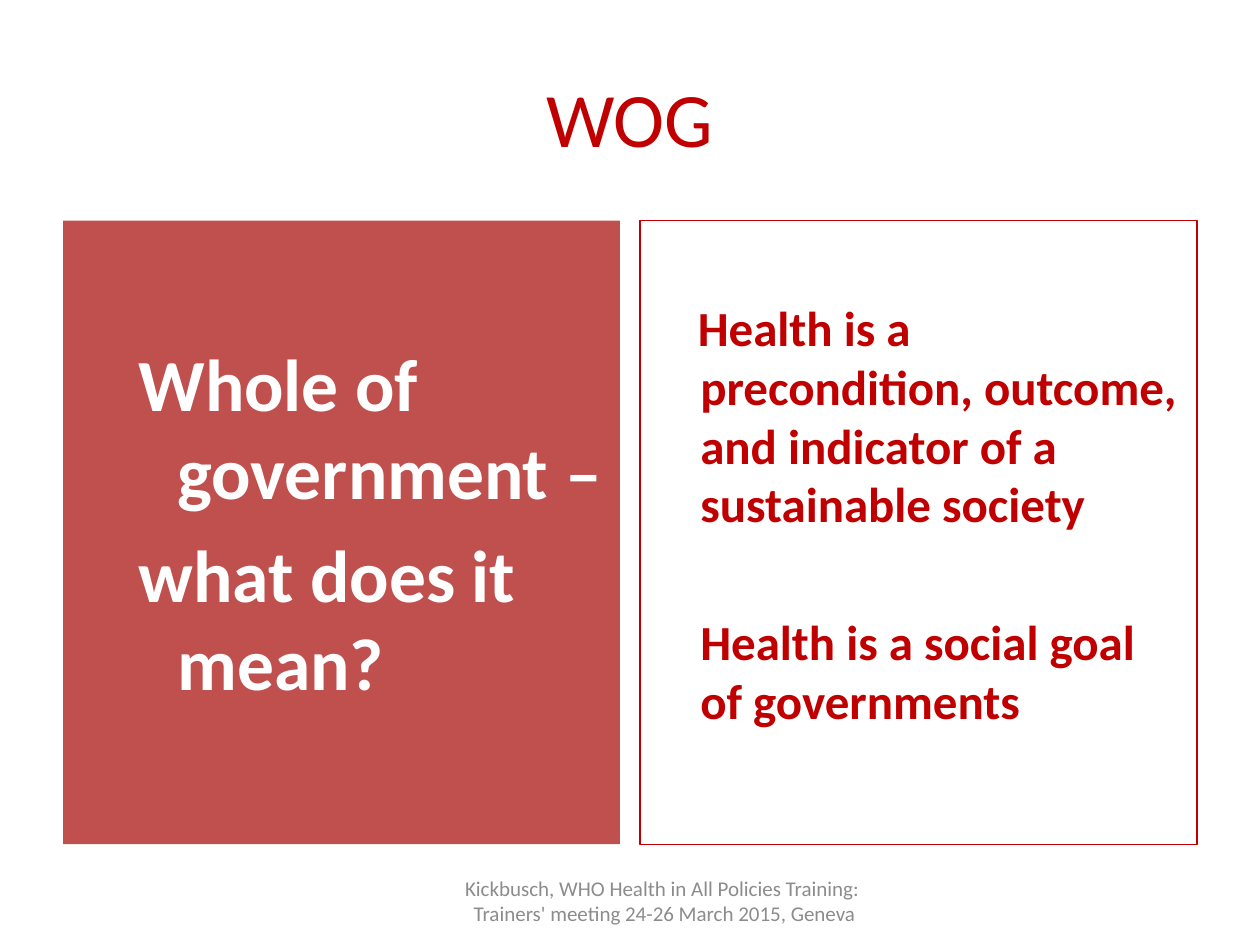
"""Build the WOG slide: a title, two text panels and a footer."""
import pptx
import pptx.dml.color
import pptx.enum.shapes
import pptx.enum.text
import pptx.util

Inches, Pt = pptx.util.Inches, pptx.util.Pt
ALIGN, ANCHOR = pptx.enum.text.PP_ALIGN, pptx.enum.text.MSO_ANCHOR
RED, WHITE, GREY = "C00000", "FFFFFF", "8C8C8C"


def rgb(value):
    return pptx.dml.color.RGBColor.from_string(value)


def write(s, lines, size, color, bold=False, align=ALIGN.CENTER, anchor=ANCHOR.MIDDLE,
          top=0.05, gap=0, margin=0, indents=(0, 0)):
    tf = s.text_frame
    tf.word_wrap = True
    tf.vertical_anchor = anchor
    tf.margin_top = Inches(top)
    for i, (line, indent) in enumerate(zip(lines, indents)):
        p = tf.paragraphs[0] if i == 0 else tf.add_paragraph()
        p.alignment = align
        p.space_before = Pt(gap if i else 0)
        pPr = p._p.get_or_add_pPr()
        pPr.set("marL", str(Inches(margin)))
        pPr.set("indent", str(Inches(indent)))
        r = p.add_run()
        r.text = line
        r.font.name = "Calibri"
        r.font.size = Pt(size)
        r.font.bold = bold
        r.font.color.rgb = rgb(color)


prs = pptx.Presentation()
prs.slide_width, prs.slide_height = Inches(10), Inches(7.5)
slide = prs.slides.add_slide(prs.slide_layouts[6])

title = slide.shapes.add_textbox(Inches(0.5), Inches(0.3), Inches(9), Inches(1.25))
write(title, ["WOG"], 44, RED)

panels = [
    (0.5, "C0504D", None, ["Whole of government –", "what does it mean?"],
     dict(size=42, color=WHITE, top=0.93, gap=8.4, margin=0.81, indents=(-0.31, -0.31))),
    (5.08, None, RED,
     ["Health is a precondition, outcome, and indicator of a sustainable society",
      "Health is a social goal of governments"],
     dict(size=28, color=RED, top=0.61, gap=45, margin=0.38, indents=(-0.02, 0))),
]
for left, fill, line, lines, style in panels:
    s = slide.shapes.add_shape(pptx.enum.shapes.MSO_SHAPE.RECTANGLE,
                               Inches(left), Inches(1.75), Inches(4.42), Inches(4.95))
    s.shadow.inherit = False
    if fill:
        s.fill.solid()
        s.fill.fore_color.rgb = rgb(fill)
    else:
        s.fill.background()
    if line:
        s.line.color.rgb = rgb(line)
        s.line.width = Pt(0.75)
    else:
        s.line.fill.background()
    write(s, lines, bold=True, align=ALIGN.LEFT, anchor=ANCHOR.TOP, **style)

footer = slide.shapes.add_textbox(Inches(3.42), Inches(6.95), Inches(3.71), Inches(0.4))
write(footer, ["Kickbusch, WHO Health in All Policies Training: ",
               "Trainers' meeting 24-26 March 2015, Geneva"], 12, GREY)

prs.save("out.pptx")
